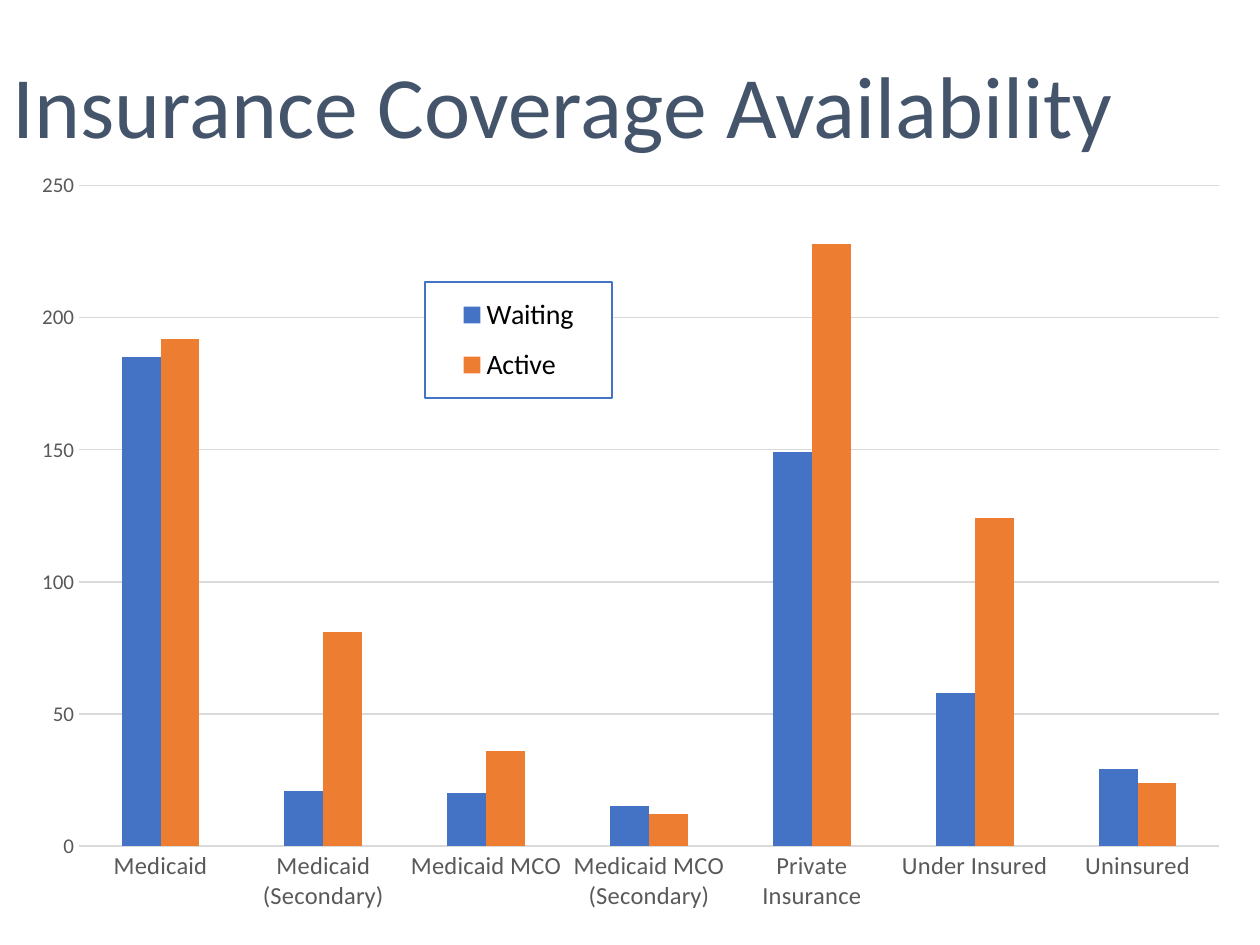
from dataclasses import dataclass

from lxml.etree import _Element
from pptx import Presentation
from pptx.chart.axis import _BaseAxis
from pptx.chart.chart import Chart
from pptx.chart.data import CategoryChartData
from pptx.dml.color import RGBColor
from pptx.enum.chart import XL_CHART_TYPE, XL_LEGEND_POSITION, XL_TICK_MARK
from pptx.enum.text import MSO_ANCHOR, MSO_AUTO_SIZE, PP_ALIGN
from pptx.oxml import parse_xml
from pptx.oxml.ns import nsdecls
from pptx.text.text import Font
from pptx.util import Cm, Pt

FONT = "Calibri"
BLUE = "4472C4"
ORANGE = "ED7D31"
GREY = "595959"
RULE = "D9D9D9"


@dataclass(frozen=True)
class Status:
    name: str
    patients: tuple[int, ...]
    color: str


@dataclass(frozen=True)
class Area:
    x: float
    y: float
    w: float
    h: float


COVERAGES = (
    "Medicaid",
    "Medicaid (Secondary)",
    "Medicaid MCO",
    "Medicaid MCO (Secondary)",
    "Private Insurance",
    "Under Insured",
    "Uninsured",
)
STATUSES = (
    Status("Waiting", (185, 21, 20, 15, 149, 58, 29), BLUE),
    Status("Active", (192, 81, 36, 12, 228, 124, 24), ORANGE),
)
PLOT_AREA = Area(0.05, 0.035, 0.93, 0.858)
LEGEND_AREA = Area(0.332, 0.16, 0.153, 0.151)


def rgb(color: str) -> RGBColor:
    return RGBColor.from_string(color)


def style_font(font: Font, size: float, color: str) -> None:
    font.name = FONT
    font.size = Pt(size)
    font.bold = False
    font.color.rgb = rgb(color)


def manual_layout(area: Area, inner: bool = False) -> _Element:
    target = '<c:layoutTarget val="inner"/>' if inner else ""
    return parse_xml(
        f'<c:layout {nsdecls("c")}><c:manualLayout>{target}'
        '<c:xMode val="edge"/><c:yMode val="edge"/>'
        f'<c:x val="{area.x}"/><c:y val="{area.y}"/>'
        f'<c:w val="{area.w}"/><c:h val="{area.h}"/>'
        "</c:manualLayout></c:layout>"
    )


def style_axis(axis: _BaseAxis, size: float) -> None:
    axis.major_tick_mark = XL_TICK_MARK.NONE
    axis.minor_tick_mark = XL_TICK_MARK.NONE
    style_font(axis.tick_labels.font, size, GREY)


def style_axes(chart: Chart) -> None:
    coverage_axis, count_axis = chart.category_axis, chart.value_axis
    style_axis(coverage_axis, 14)
    style_axis(count_axis, 12)
    count_axis.minimum_scale = 0
    count_axis.maximum_scale = 250
    count_axis.major_unit = 50
    count_axis.has_major_gridlines = True
    count_axis.format.line.fill.background()
    for line in (coverage_axis.format.line, count_axis.major_gridlines.format.line):
        line.color.rgb = rgb(RULE)
        line.width = Pt(0.75)


def style_bars(chart: Chart) -> None:
    plot = chart.plots[0]
    plot.gap_width = 219
    plot.overlap = 0
    plot.vary_by_categories = False
    for bars, status in zip(plot.series, STATUSES):
        bars.invert_if_negative = False
        bars.format.fill.solid()
        bars.format.fill.fore_color.rgb = rgb(status.color)


def place_plot(chart: Chart) -> None:
    plot_area = chart._chartSpace.chart.plotArea
    for layout in plot_area.xpath("c:layout"):
        plot_area.remove(layout)
    plot_area.insert(0, manual_layout(PLOT_AREA, inner=True))


def add_legend(chart: Chart) -> None:
    chart.has_legend = True
    legend = chart.legend
    legend.position = XL_LEGEND_POSITION.RIGHT
    legend.include_in_layout = True
    style_font(legend.font, 16, "000000")
    element = legend._element
    for layout in element.xpath("c:layout"):
        element.remove(layout)
    overlay = element.xpath("c:overlay")[0]
    overlay.addprevious(manual_layout(LEGEND_AREA))
    overlay.addnext(
        parse_xml(
            f'<c:spPr {nsdecls("c", "a")}>'
            '<a:solidFill><a:srgbClr val="FFFFFF"/></a:solidFill>'
            f'<a:ln w="{Pt(1)}"><a:solidFill><a:srgbClr val="{BLUE}"/></a:solidFill></a:ln>'
            "</c:spPr>"
        )
    )


def main() -> None:
    deck = Presentation()
    deck.slide_width, deck.slide_height = Cm(25.4), Cm(19.05)
    slide = deck.slides.add_slide(deck.slide_layouts[5])

    title = slide.shapes.title
    title.left, title.top = Cm(0), Cm(0.03)
    title.width, title.height = Cm(25.4), Cm(4.11)
    title.text_frame.text = "Insurance Coverage Availability"
    title.text_frame.auto_size = MSO_AUTO_SIZE.NONE
    title.text_frame.vertical_anchor = MSO_ANCHOR.MIDDLE
    heading = title.text_frame.paragraphs[0]
    heading.alignment = PP_ALIGN.LEFT
    style_font(heading.font, 50, "44546A")

    coverage_data = CategoryChartData()
    coverage_data.categories = COVERAGES
    for status in STATUSES:
        coverage_data.add_series(status.name, status.patients)
    chart = slide.shapes.add_chart(
        XL_CHART_TYPE.COLUMN_CLUSTERED,
        Cm(0.36), Cm(3.2), Cm(24.71), Cm(15.52),
        coverage_data,
    ).chart
    chart.has_title = False
    style_font(chart.font, 10, "000000")
    style_axes(chart)
    style_bars(chart)
    place_plot(chart)
    add_legend(chart)

    deck.save("out.pptx")


if __name__ == "__main__":
    main()
